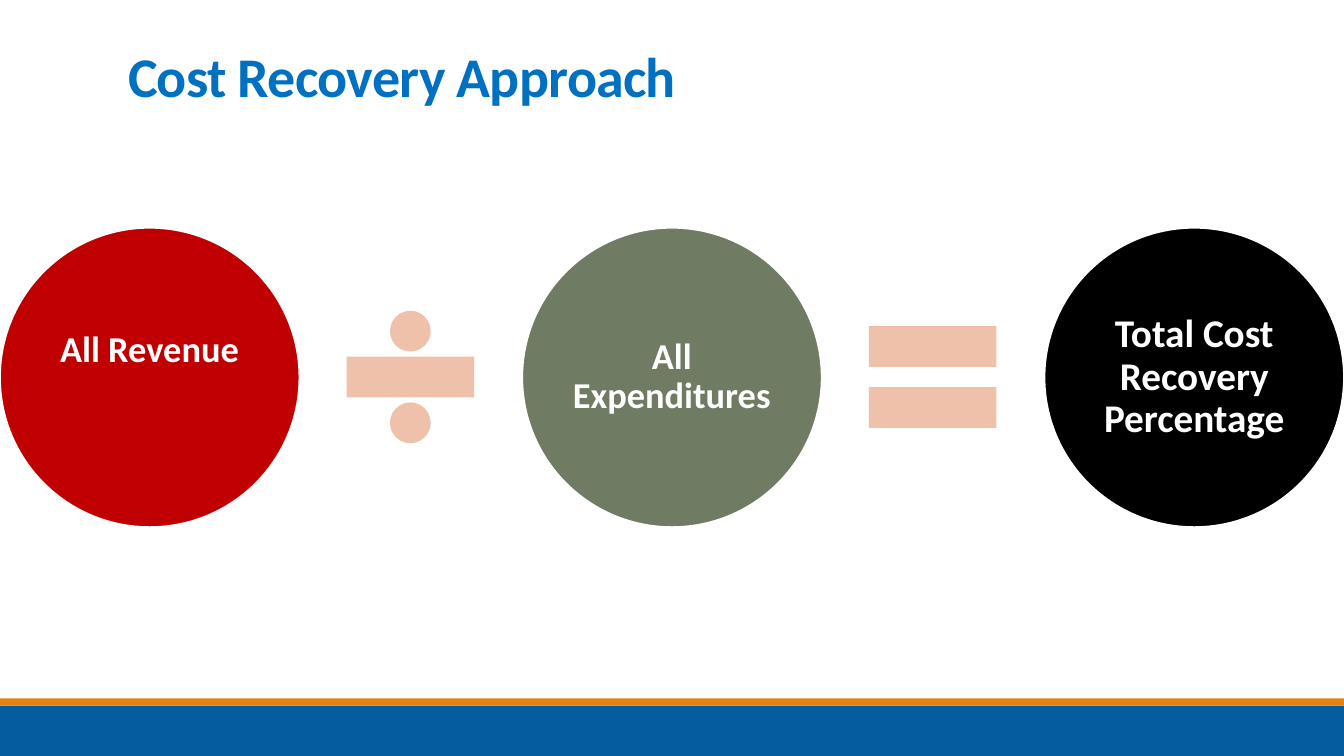
from dataclasses import dataclass

from pptx import Presentation
from pptx.dml.color import RGBColor
from pptx.enum.shapes import MSO_SHAPE
from pptx.enum.text import MSO_ANCHOR, MSO_AUTO_SIZE, PP_ALIGN
from pptx.shapes.autoshape import Shape
from pptx.slide import Slide
from pptx.util import Pt

EMU_PER_PX = 9144
SLIDE_WIDTH, SLIDE_HEIGHT = 1333, 750
CIRCLE_SIZE, OPERATOR_SIZE = 297, 172
CIRCLE_TOP = 226
CIRCLE_STEP = (SLIDE_WIDTH - CIRCLE_SIZE) // 2
OPERATOR_TOP = CIRCLE_TOP + (CIRCLE_SIZE - OPERATOR_SIZE) // 2
OPERATOR_LEFT = (CIRCLE_STEP + CIRCLE_SIZE - OPERATOR_SIZE) // 2
INSET = 4

COLORS = {
    "title": "0070C0",
    "footer": "045D9F",
    "stripe": "E48312",
    "revenue": "C00000",
    "expenditures": "6F7B63",
    "recovery": "000000",
    "operator": "EFC1AB",
    "white": "FFFFFF",
}


@dataclass(frozen=True)
class Term:
    text: str
    color: str
    font_size: int
    bottom_inset: int = INSET


@dataclass(frozen=True)
class Block:
    kind: MSO_SHAPE
    left: int
    top: int
    width: int
    height: int
    color: str


TERMS = [
    Term("All Revenue", "revenue", 26, 58),
    Term("All Expenditures", "expenditures", 26),
    Term("Total Cost Recovery Percentage", "recovery", 28),
]
BARS = [
    Block(MSO_SHAPE.RECTANGLE, 0, 700, SLIDE_WIDTH, 50, "footer"),
    Block(MSO_SHAPE.RECTANGLE, 0, 693, SLIDE_WIDTH, 7, "stripe"),
]
OPERATORS = [
    Block(kind, OPERATOR_LEFT + index * CIRCLE_STEP, OPERATOR_TOP,
          OPERATOR_SIZE, OPERATOR_SIZE, "operator")
    for index, kind in enumerate([MSO_SHAPE.MATH_DIVIDE, MSO_SHAPE.MATH_EQUAL])
]


def px(length: int) -> int:
    return length * EMU_PER_PX


def rgb(name: str) -> RGBColor:
    return RGBColor.from_string(COLORS[name])


def apply_format(target: object, values: dict[str, object]) -> None:
    for name, value in values.items():
        setattr(target, name, value)


def write_text(shape: Shape, text: str, size: int, color: str,
               frame_format: dict[str, object],
               paragraph_format: dict[str, object]) -> None:
    frame = shape.text_frame
    frame.text = text
    apply_format(frame, {"word_wrap": True, "auto_size": MSO_AUTO_SIZE.NONE} | frame_format)
    paragraph = frame.paragraphs[0]
    apply_format(paragraph, paragraph_format)
    font = paragraph.runs[0].font
    apply_format(font, {"name": "Calibri", "size": Pt(size), "bold": True})
    font.color.rgb = rgb(color)


def draw_block(slide: Slide, block: Block) -> Shape:
    shape = slide.shapes.add_shape(
        block.kind, px(block.left), px(block.top), px(block.width), px(block.height))
    shape.shadow.inherit = False
    shape.fill.solid()
    shape.fill.fore_color.rgb = rgb(block.color)
    shape.line.fill.background()
    return shape


def draw_term(slide: Slide, term: Term, left: int) -> None:
    circle = draw_block(slide, Block(
        MSO_SHAPE.OVAL, left, CIRCLE_TOP, CIRCLE_SIZE, CIRCLE_SIZE, term.color))
    circle.line.color.rgb = rgb("white")
    circle.line.width = Pt(1.25)
    frame_format = {
        "vertical_anchor": MSO_ANCHOR.MIDDLE,
        "margin_left": px(INSET),
        "margin_right": px(INSET),
        "margin_top": px(INSET),
        "margin_bottom": px(term.bottom_inset),
    }
    write_text(circle, term.text, term.font_size, "white", frame_format,
               {"alignment": PP_ALIGN.CENTER, "line_spacing": 0.9})


def format_title(slide: Slide) -> None:
    title = slide.shapes.title
    apply_format(title, {"left": px(117), "top": px(15),
                         "width": px(1122), "height": px(98)})
    write_text(title, "Cost Recovery Approach", 40, "title",
               {"vertical_anchor": MSO_ANCHOR.BOTTOM},
               {"alignment": PP_ALIGN.LEFT, "line_spacing": 0.85})
    run = title.text_frame.paragraphs[0].runs[0]
    run._r.get_or_add_rPr().set("spc", "-50")


def main() -> None:
    presentation = Presentation()
    apply_format(presentation, {"slide_width": px(SLIDE_WIDTH),
                                "slide_height": px(SLIDE_HEIGHT)})
    slide = presentation.slides.add_slide(presentation.slide_layouts.get_by_name("Title Only"))
    format_title(slide)
    for block in BARS + OPERATORS:
        draw_block(slide, block)
    for index, term in enumerate(TERMS):
        draw_term(slide, term, index * CIRCLE_STEP)
    presentation.save("out.pptx")


if __name__ == "__main__":
    main()
